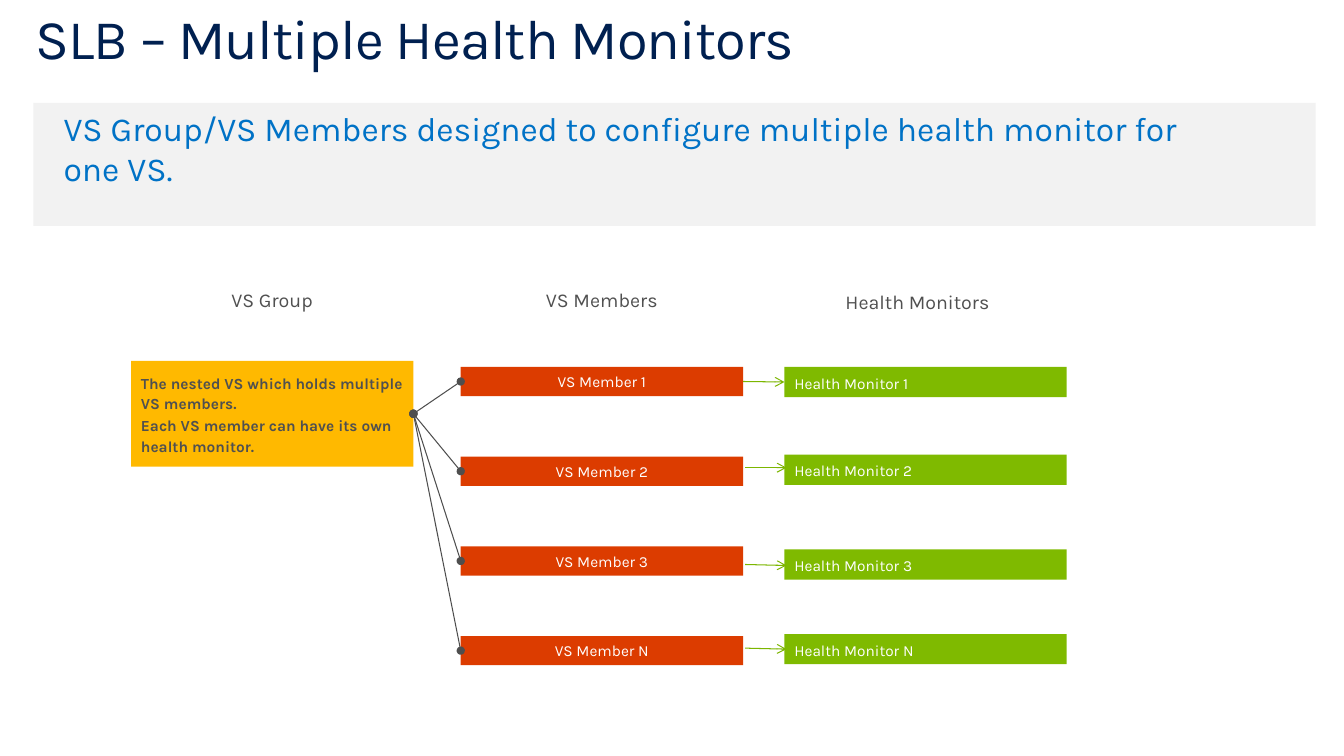
from lxml import etree
from pptx import Presentation
from pptx.dml.color import RGBColor
from pptx.enum.shapes import MSO_CONNECTOR, MSO_SHAPE
from pptx.enum.text import MSO_ANCHOR, MSO_AUTO_SIZE, PP_ALIGN
from pptx.oxml.ns import qn
from pptx.util import Inches, Pt

RECT, STRAIGHT = MSO_SHAPE.RECTANGLE, MSO_CONNECTOR.STRAIGHT
TOP, MIDDLE = MSO_ANCHOR.TOP, MSO_ANCHOR.MIDDLE
LEFT, CENTER = PP_ALIGN.LEFT, PP_ALIGN.CENTER
SIDE_LEFT, SIDE_RIGHT = 1, 3

# Content
TITLE = "SLB – Multiple Health Monitors"
STATEMENT = ("VS Group/VS Members designed to configure multiple health "
             "monitor for one VS.")
GROUP_NOTES = ["The nested VS which holds multiple VS members.",
               "Each VS member can have its own health monitor."]
HEADINGS = [("VS Group", 1.3, 2.7), ("VS Members", 4.57, 2.7),
            ("Health Monitors", 7.7, 2.72)]
# Suffix, top of the monitor, arrow start (x, y), arrow end (x, y)
ROWS = [("1", 3.64, (7.37, 3.79), (7.78, 3.79)),
        ("2", 4.51, (7.39, 4.64), (7.8, 4.64)),
        ("3", 5.45, (7.39, 5.6), (7.8, 5.61)),
        ("N", 6.29, (7.39, 6.43), (7.8, 6.44))]

# Layout
COLUMN_WIDTH = 2.8
GROUP_X, MEMBER_X, MONITOR_X = 1.3, 4.57, 7.78
MEMBER_TOP, MEMBER_STEP = 3.64, 0.89
MEMBER_HEIGHT, MONITOR_HEIGHT = 0.29, 0.3

# Text formats
TITLE_FONT = {"size": 40, "color": "002050"}
STATEMENT_FONT = {"size": 24, "color": "0072C6"}
HEADING_FONT = {"size": 14, "color": "505050"}
NOTE_FONT = {"size": 11, "color": "505050", "bold": True}
LABEL_FONT = {"size": 11, "color": "FFFFFF"}


def rgb(value):
    return RGBColor.from_string(value)


def write(shape, lines, look, align=LEFT, anchor=MIDDLE, spacing=None,
          insets=(0.1, 0.05, 0.1, 0.05)):
    frame = shape.text_frame
    sides = ("margin_left", "margin_top", "margin_right", "margin_bottom")
    settings = dict(zip(sides, map(Inches, insets)), word_wrap=True,
                    auto_size=MSO_AUTO_SIZE.NONE, vertical_anchor=anchor)
    for name, value in settings.items():
        setattr(frame, name, value)
    font_values = {"name": "Karla", "size": Pt(look["size"]),
                   "bold": look.get("bold", False)}
    for index, line in enumerate(lines):
        paragraph = frame.add_paragraph() if index else frame.paragraphs[0]
        paragraph.alignment = align
        paragraph.line_spacing = spacing
        paragraph.space_before = Pt(1 if index else 0)
        run = paragraph.add_run()
        run.text = line
        for name, value in font_values.items():
            setattr(run.font, name, value)
        run.font.color.rgb = rgb(look["color"])


def add_box(slide, x, y, width, height, fill):
    box = slide.shapes.add_shape(RECT, *map(Inches, (x, y, width, height)))
    box.shadow.inherit = False
    box.fill.solid()
    box.fill.fore_color.rgb = rgb(fill)
    box.line.fill.background()
    return box


def add_line(slide, start, end, color, **ends):
    connector = slide.shapes.add_connector(STRAIGHT, *map(Inches, start + end))
    connector.line.color.rgb = rgb(color)
    connector.line.width = Pt(0.75)
    outline = connector.line._get_or_add_ln()
    for tag, kind in ends.items():
        etree.SubElement(outline, qn(f"a:{tag}"), type=kind)
    etree.SubElement(connector._element.spPr, qn("a:effectLst"))
    return connector


def main():
    prs = Presentation()
    prs.slide_width, prs.slide_height = Inches(13.33), Inches(7.5)
    slide = prs.slides.add_slide(prs.slide_layouts[5])

    # Title
    title = slide.shapes.title
    title.left, title.top = Inches(0), Inches(0)
    title.width, title.height = Inches(13.33), Inches(0.71)
    write(title, [TITLE], TITLE_FONT, spacing=0.9,
          insets=(0.35, 0.17, 0.06, 0.06))
    title_run = title.text_frame.paragraphs[0].runs[0]
    title_run._r.get_or_add_rPr().set("spc", "-60")

    # Statement band
    band = add_box(slide, 0.33, 1.02, 12.72, 1.22, "F2F2F2")
    write(band, [STATEMENT], STATEMENT_FONT, anchor=TOP,
          insets=(0.3, 0.05, 1, 0.05))

    # Column headings
    for text, x, y in HEADINGS:
        heading = slide.shapes.add_textbox(
            *map(Inches, (x, y, COLUMN_WIDTH, 0.55)))
        write(heading, [text], HEADING_FONT, CENTER)

    # Group
    group = add_box(slide, GROUP_X, 3.58, COLUMN_WIDTH, 1.05, "FFB900")
    write(group, GROUP_NOTES, NOTE_FONT, spacing=1.1)

    # Members and monitors, one row each
    for index, (suffix, monitor_top, start, end) in enumerate(ROWS):
        member_top = MEMBER_TOP + index * MEMBER_STEP
        member = add_box(slide, MEMBER_X, member_top, COLUMN_WIDTH,
                         MEMBER_HEIGHT, "DC3C00")
        write(member, [f"VS Member {suffix}"], LABEL_FONT, CENTER)
        monitor = add_box(slide, MONITOR_X, monitor_top, COLUMN_WIDTH,
                          MONITOR_HEIGHT, "7FBA00")
        write(monitor, [f"Health Monitor {suffix}"], LABEL_FONT, spacing=1.1)

        branch = add_line(slide, (MEMBER_X, member_top), (4.1, 4.11), "4E4E4E",
                          headEnd="oval", tailEnd="oval")
        branch.begin_connect(member, SIDE_LEFT)
        branch.end_connect(group, SIDE_RIGHT)

        arrow = add_line(slide, start, end, "7CB600", tailEnd="arrow")
        if index == 0:
            arrow.begin_connect(member, SIDE_RIGHT)
            arrow.end_connect(monitor, SIDE_LEFT)

    prs.save("out.pptx")


if __name__ == "__main__":
    main()
